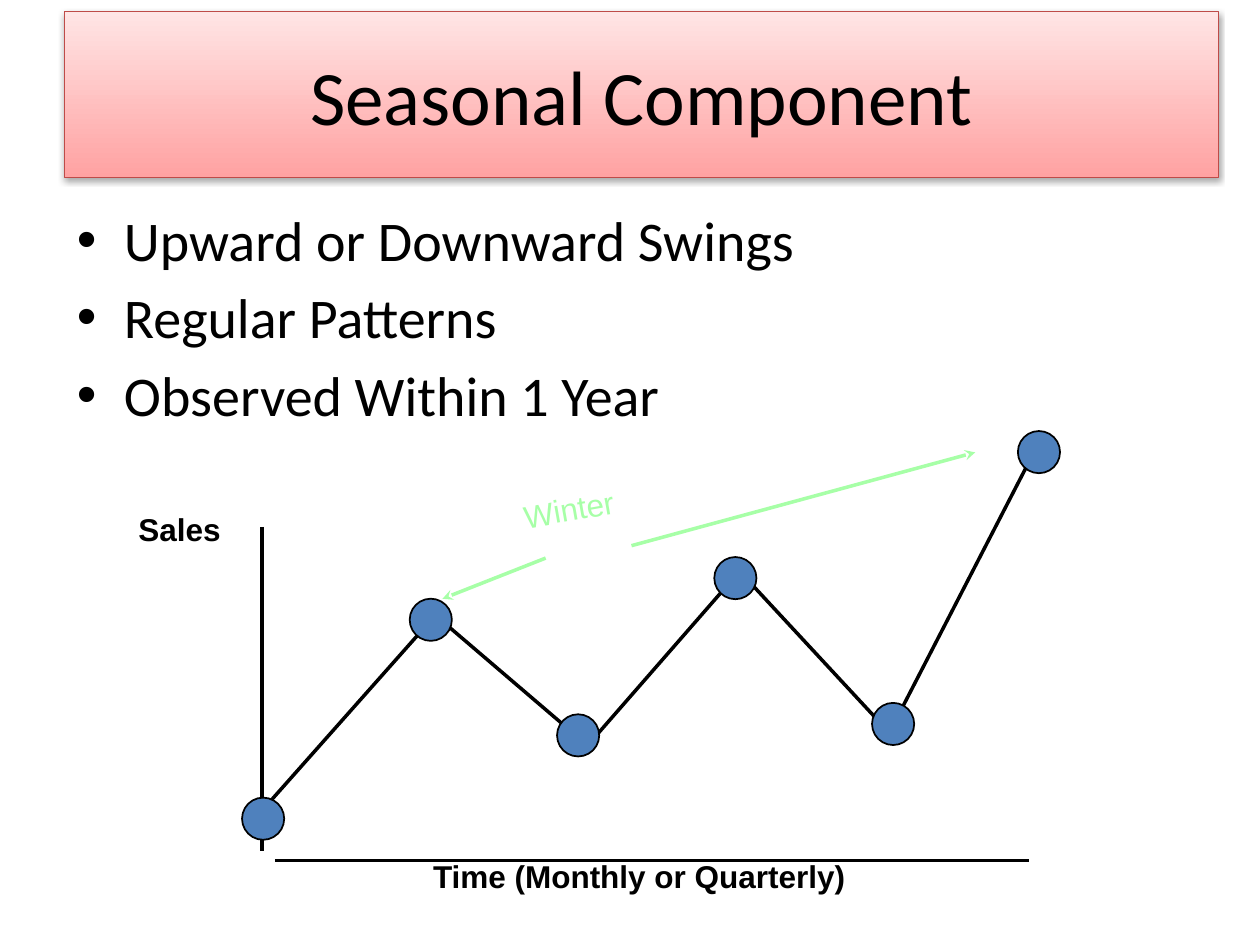
from lxml import etree
from pptx import Presentation
from pptx.dml.color import RGBColor
from pptx.enum.shapes import MSO_CONNECTOR, MSO_SHAPE
from pptx.enum.text import MSO_ANCHOR, PP_ALIGN
from pptx.oxml.ns import qn
from pptx.util import Cm, Pt

STRAIGHT = MSO_CONNECTOR.STRAIGHT
OVAL = MSO_SHAPE.OVAL
MIDDLE = MSO_ANCHOR.MIDDLE
LEFT, CENTER = PP_ALIGN.LEFT, PP_ALIGN.CENTER

BLACK = RGBColor(0x00, 0x00, 0x00)
BLUE = RGBColor(0x4F, 0x81, 0xBD)
GREEN = RGBColor(0xA7, 0xFF, 0xA7)
PINK_LIGHT = RGBColor(0xFF, 0xE5, 0xE5)
PINK_DARK = RGBColor(0xFF, 0xA2, 0xA2)
RED = RGBColor(0xBE, 0x4B, 0x48)

MARKER_SIZE = 0.85
BULLETS = ["Upward or Downward Swings", "Regular Patterns", "Observed Within 1 Year"]
AXES = [(5.28, 10.62, 5.28, 17.15), (5.54, 17.35, 20.75, 17.35)]
SWINGS = [
    (5.31, 16.31, 8.69, 12.5),
    (8.89, 12.5, 11.86, 15.04),
    (11.86, 15.01, 14.81, 11.63),
    (14.83, 11.43, 17.78, 14.61),
    (18.01, 14.61, 20.96, 8.89),
]
MARKERS = [(4.88, 16.08), (8.26, 12.07), (11.23, 14.4),
           (14.4, 11.23), (17.58, 14.17), (20.52, 8.69)]
WINTER_ARROWS = [(11, 11.25, 8.92, 12.07), (12.73, 11, 19.66, 9.12)]


def add_run(p, text, size, font, color=BLACK, bold=False):
    """Append a formatted run to a paragraph."""
    r = p.add_run()
    r.text = text
    r.font.size = Pt(size)
    r.font.name = font
    r.font.bold = bold
    r.font.color.rgb = color


def add_shadow(sp):
    """Give a shape a soft shadow below it."""
    effects = etree.SubElement(sp._element.spPr, qn("a:effectLst"))
    shadow = etree.SubElement(effects, qn("a:outerShdw"), blurRad="40000",
                              dist="23000", dir="5400000", rotWithShape="0")
    color = etree.SubElement(shadow, qn("a:srgbClr"), val="000000")
    etree.SubElement(color, qn("a:alpha"), val="35000")


def format_title(sp, text):
    """Place the title on a pink gradient panel."""
    sp.left, sp.top, sp.width, sp.height = Cm(1.3), Cm(0.23), Cm(23.27), Cm(3.35)
    sp.fill.gradient()
    sp.fill.gradient_angle = 270
    for stop, color in zip(sp.fill.gradient_stops, (PINK_LIGHT, PINK_DARK)):
        stop.color.rgb = color
    sp.line.color.rgb = RED
    sp.line.width = Pt(0.75)
    add_shadow(sp)
    tf = sp.text_frame
    tf.vertical_anchor = MIDDLE
    p = tf.paragraphs[0]
    p.alignment = CENTER
    add_run(p, text, 44, "Calibri")


def add_bullets(s, items):
    """Add the bulleted list."""
    tf = s.shapes.add_textbox(Cm(1.3), Cm(4.01), Cm(23.27), Cm(12.5)).text_frame
    tf.word_wrap = True
    for i, item in enumerate(items):
        p = tf.paragraphs[0] if i == 0 else tf.add_paragraph()
        p.space_before = Pt(6)
        pPr = p._p.get_or_add_pPr()
        pPr.set("marL", str(Cm(0.95)))
        pPr.set("indent", str(-Cm(0.95)))
        etree.SubElement(pPr, qn("a:buFont"), typeface="Arial")
        etree.SubElement(pPr, qn("a:buChar"), char="•")
        add_run(p, item, 32, "Calibri")


def add_label(s, text, left, top, width, color=BLACK, bold=True, align=LEFT, rotation=0):
    """Add a one-line chart label."""
    sp = s.shapes.add_textbox(Cm(left), Cm(top), Cm(width), Cm(1.27))
    sp.rotation = rotation
    tf = sp.text_frame
    tf.word_wrap = True
    p = tf.paragraphs[0]
    p.alignment = align
    add_run(p, text, 18, "Arial", color, bold)


def add_line(s, ends, color=BLACK, arrow=False):
    """Add a straight line, with an arrowhead at its end if asked."""
    line = s.shapes.add_connector(STRAIGHT, *(Cm(v) for v in ends))
    line.line.color.rgb = color
    line.line.width = Pt(2)
    if arrow:
        etree.SubElement(line.line._get_or_add_ln(), qn("a:tailEnd"), type="stealth")
    etree.SubElement(line._element.spPr, qn("a:effectLst"))


def add_marker(s, left, top):
    """Add a round data marker."""
    sp = s.shapes.add_shape(OVAL, Cm(left), Cm(top), Cm(MARKER_SIZE), Cm(MARKER_SIZE))
    sp.shadow.inherit = False
    sp.fill.solid()
    sp.fill.fore_color.rgb = BLUE
    sp.line.color.rgb = BLACK
    sp.line.width = Pt(1)


def main():
    """Build the slide and save it."""
    prs = Presentation()
    prs.slide_width, prs.slide_height = Cm(25.4), Cm(19.05)
    s = prs.slides.add_slide(prs.slide_layouts[5])
    format_title(s.shapes.title, "Seasonal Component")
    add_bullets(s, BULLETS)
    for ends in AXES:
        add_line(s, ends)
    add_label(s, "Sales", 2.54, 10.16, 4.01)
    add_label(s, "Time (Monthly or Quarterly)", 8.48, 17.15, 12.47)
    for ends in SWINGS:
        add_line(s, ends)
    for left, top in MARKERS:
        add_marker(s, left, top)
    add_label(s, "Winter", 9.32, 9.75, 4.34, GREEN, False, CENTER, 350)
    for ends in WINTER_ARROWS:
        add_line(s, ends, GREEN, True)
    prs.save("out.pptx")


if __name__ == "__main__":
    main()
